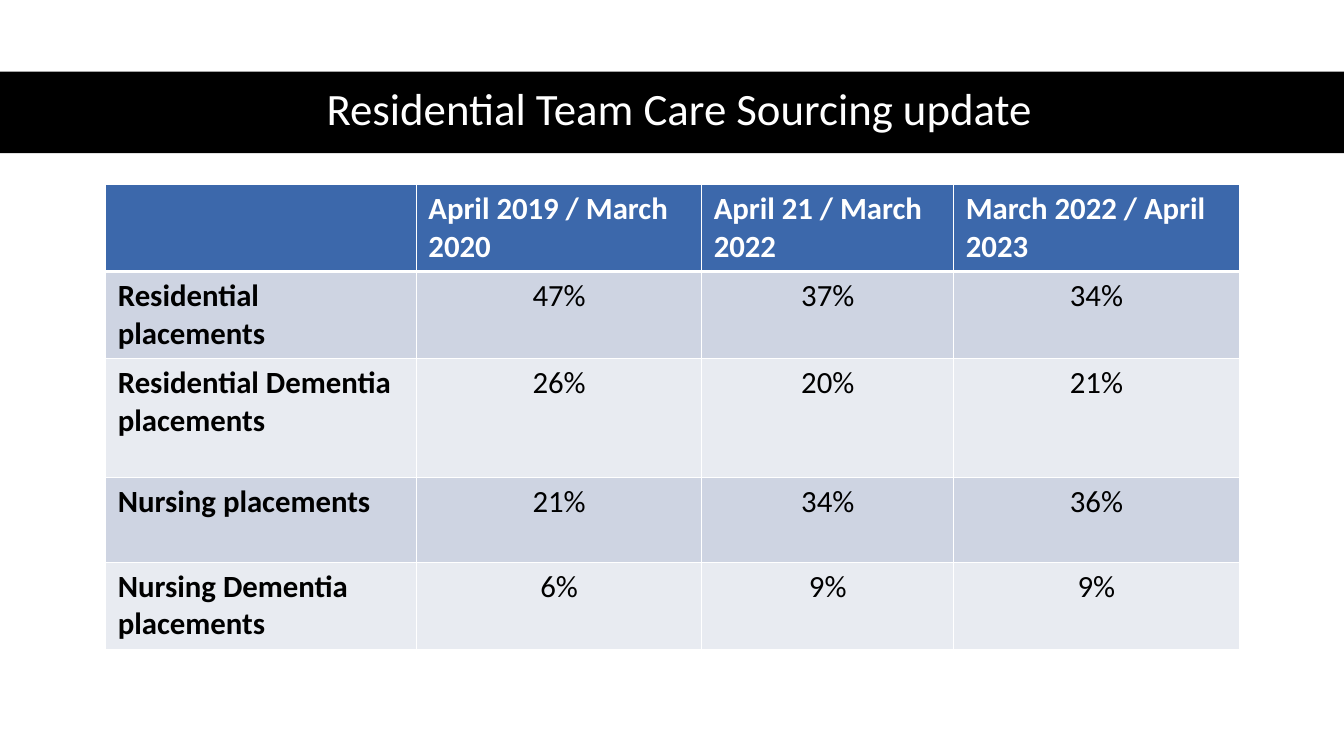
from lxml import etree
from pptx import Presentation
from pptx import util as u
from pptx.dml.color import RGBColor
from pptx.enum import shapes, text
from pptx.oxml import ns

COLORS = {"black": "000000", "white": "FFFFFF", "header": "3C68AB",
          "band_dark": "CED4E2", "band_light": "E8EBF1"}
COL_WIDTHS = [3.08, 2.83, 2.5, 2.83]
ROW_HEIGHTS = [0.84, 0.84, 1.18, 0.84, 0.84]
PLACEMENTS = [
    ["", "April 2019 / March 2020", "April 21 / March 2022", "March 2022 / April 2023"],
    ["Residential placements", "47%", "37%", "34%"],
    ["Residential Dementia placements", "26%", "20%", "21%"],
    ["Nursing placements", "21%", "34%", "36%"],
    ["Nursing Dementia placements", "6%", "9%", "9%"],
]


def color(name):
    return RGBColor.from_string(COLORS[name])


def write(tf, content, size=22, fill="black", bold=False, align=None, spacing=None):
    p = tf.paragraphs[0]
    p.alignment = align
    p.line_spacing = spacing
    r = p.add_run()
    r.text = content
    r.font.name = "Calibri"
    r.font.size = u.Pt(size)
    r.font.bold = bold
    r.font.color.rgb = color(fill)


class Deck:
    def __init__(self):
        self.prs = Presentation()
        self.prs.slide_width = u.Inches(13.33)
        self.prs.slide_height = u.Inches(7.5)
        self.s = self.prs.slides.add_slide(self.prs.slide_layouts[5])

    def bar(self, x, y, w, h, fill):
        sp = self.s.shapes.add_shape(shapes.MSO_SHAPE.RECTANGLE, *map(u.Inches, (x, y, w, h)))
        sp.shadow.inherit = False
        sp.fill.solid()
        sp.fill.fore_color.rgb = color(fill)
        sp.line.fill.background()
        return sp

    def title(self, content, x, y, w, h):
        sp = self.s.shapes.title
        sp.left, sp.top, sp.width, sp.height = map(u.Inches, (x, y, w, h))
        tf = sp.text_frame
        tf.word_wrap = True
        tf.auto_size = text.MSO_AUTO_SIZE.NONE
        tf.vertical_anchor = text.MSO_ANCHOR.MIDDLE
        write(tf, content, size=32, fill="white", align=text.PP_ALIGN.CENTER, spacing=0.9)
        return sp

    def borders(self, cell, **widths):
        tc_pr = cell._tc.get_or_add_tcPr()
        for side, width in widths.items():
            ln = etree.SubElement(tc_pr, ns.qn(f"a:ln{side}"), w=str(u.Pt(width)))
            fill = etree.SubElement(ln, ns.qn("a:solidFill"))
            etree.SubElement(fill, ns.qn("a:srgbClr"), val=COLORS["white"])

    def table(self, x, y, rows, widths, heights):
        size = (x, y, sum(widths), sum(heights))
        tbl = self.s.shapes.add_table(len(rows), len(widths), *map(u.Inches, size)).table
        for col, width in zip(tbl.columns, widths):
            col.width = u.Inches(width)
        for row, height in zip(tbl.rows, heights):
            row.height = u.Inches(height)
        for i, row in enumerate(rows):
            band = "header" if i == 0 else "band_dark" if i % 2 else "band_light"
            for j, content in enumerate(row):
                cell = tbl.cell(i, j)
                cell.margin_left = cell.margin_right = u.Inches(0.12)
                cell.margin_top = cell.margin_bottom = u.Inches(0.06)
                # Thick rule under the header row
                self.borders(cell, L=1, R=1, T=3 if i == 1 else 1, B=3 if i == 0 else 1)
                cell.fill.solid()
                cell.fill.fore_color.rgb = color(band)
                if content:
                    write(cell.text_frame, content, bold=i == 0 or j == 0,
                          fill="black" if i else "white",
                          align=text.PP_ALIGN.CENTER if i and j else None)


def main():
    deck = Deck()
    # Title on its black band
    bar = deck.bar(0, 0.71, 13.33, 0.81, "black")
    title = deck.title("Residential Team Care Sourcing update", 0.61, 0.7, 12.26, 0.81)
    title._element.addprevious(bar._element)
    # Placement shares by year
    deck.table(1.05, 1.83, PLACEMENTS, COL_WIDTHS, ROW_HEIGHTS)
    deck.prs.save("out.pptx")


if __name__ == "__main__":
    main()
